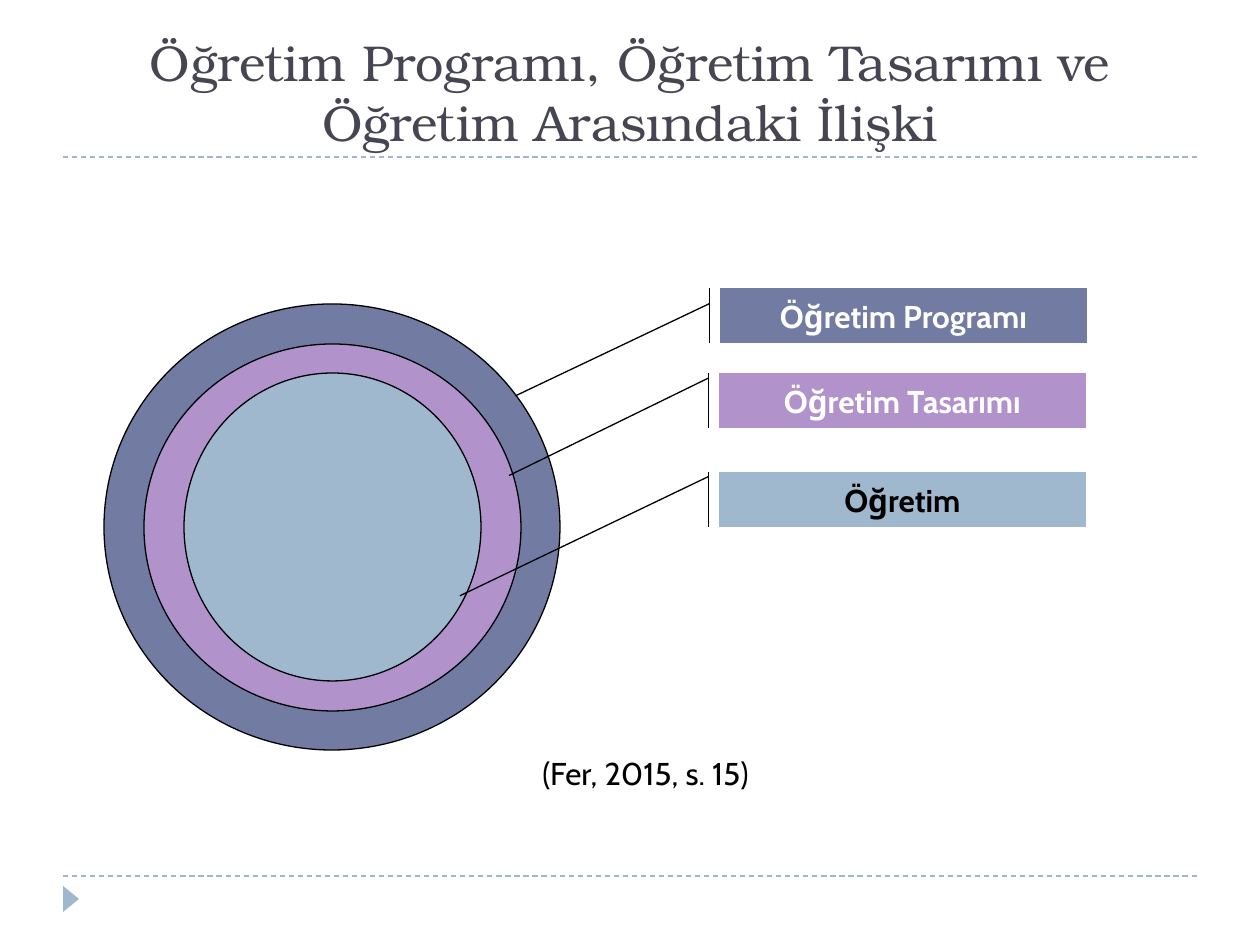
from pptx import Presentation
from pptx.dml.color import RGBColor
from pptx.enum.dml import MSO_LINE
from pptx.enum.shapes import MSO_CONNECTOR, MSO_SHAPE
from pptx.enum.text import MSO_ANCHOR, MSO_AUTO_SIZE, PP_ALIGN
from pptx.oxml.ns import qn
from pptx.util import Emu, Pt

CIRCLE = MSO_SHAPE.FLOWCHART_CONNECTOR
CALLOUT = MSO_SHAPE.LINE_CALLOUT_1_ACCENT_BAR
TRIANGLE = MSO_SHAPE.ISOSCELES_TRIANGLE
STRAIGHT, DASH = MSO_CONNECTOR.STRAIGHT, MSO_LINE.DASH
CENTER, BOTTOM, MIDDLE = PP_ALIGN.CENTER, MSO_ANCHOR.BOTTOM, MSO_ANCHOR.MIDDLE
TOP, NO_FIT = MSO_ANCHOR.TOP, MSO_AUTO_SIZE.NONE

THEME = {
    "navy": RGBColor(0x72, 0x7C, 0xA3),
    "purple": RGBColor(0xB2, 0x92, 0xCA),
    "blue": RGBColor(0x9F, 0xB8, 0xCD),
    "title": RGBColor(0x46, 0x46, 0x53),
    "black": RGBColor(0, 0, 0),
    "white": RGBColor(255, 255, 255),
    "title_font": "TeX Gyre Bonum",
    "body_font": "Cabin",
    "title_size": Pt(28.8),
    "body_size": Pt(18),
    "line_width": Pt(0.75),
}
PX = 914400 / 126


def px(*lengths):
    return [Emu(round(length * PX)) for length in lengths]


def write(shape, text, anchor, font):
    """Fill a shape with one centred paragraph; font maps font attributes to values."""
    frame = shape.text_frame
    for name, value in {"word_wrap": True, "auto_size": NO_FIT, "vertical_anchor": anchor}.items():
        setattr(frame, name, value)
    paragraph = frame.paragraphs[0]
    paragraph.alignment = CENTER
    run = paragraph.add_run()
    run.text = text
    for name, value in font.items():
        if name == "color":
            run.font.color.rgb = value
        else:
            setattr(run.font, name, value)


body_font = {"name": THEME["body_font"], "size": THEME["body_size"], "color": THEME["black"]}

prs = Presentation()
prs.slide_width, prs.slide_height = px(1260, 945)
slide = prs.slides.add_slide(prs.slide_layouts[5])
shapes = slide.shapes

# Title
title = shapes.title
title.left, title.top, title.width, title.height = px(63, 32, 1134, 126)
write(title, "Öğretim Programı, Öğretim Tasarımı ve Öğretim Arasındaki İlişki", BOTTOM,
      {"name": THEME["title_font"], "size": THEME["title_size"], "color": THEME["title"]})

# Dashed rules and page marker
for rule_y in (876, 157):
    rule = shapes.add_connector(STRAIGHT, *px(63, rule_y, 1197, rule_y))
    rule.line.color.rgb = THEME["blue"]
    rule.line.width = THEME["line_width"]
    rule.line.dash_style = DASH
    properties = rule._element.spPr
    properties.append(properties.makeelement(qn("a:effectLst"), {}))

marker = shapes.add_shape(TRIANGLE, *px(58, 891, 26, 16))
marker.rotation = 90
marker.shadow.inherit = False
marker.fill.solid()
marker.fill.fore_color.rgb = THEME["blue"]
marker.line.fill.background()

# Nested circles from the outermost inwards, then their callouts
# Callout adjustments: line start y, x and line end y, x as shares of the box
levels = [
    ("Öğretim Programı", "navy", "white", (104, 304, 456, 446), (720, 288),
     (0.285, -0.029, 1.956, -0.556)),
    ("Öğretim Tasarımı", "purple", "white", (144, 344, 377, 367), (719, 373),
     (0.093, -0.029, 1.863, -0.572)),
    ("Öğretim", "blue", "black", (184, 373, 297, 308), (719, 472),
     (0.084, -0.029, 2.25, -0.706)),
]
circles = [shapes.add_shape(CIRCLE, *px(*level[3])) for level in levels]
for circle, (label, fill, ink, _, corner, pointer) in zip(circles, levels):
    callout = shapes.add_shape(CALLOUT, *px(*corner, 367, 55))
    for index, share in enumerate(pointer):
        callout.adjustments[index] = share
    for part in (circle, callout):
        part.shadow.inherit = False
        part.fill.solid()
        part.fill.fore_color.rgb = THEME[fill]
        part.line.color.rgb = THEME["black"]
        part.line.width = THEME["line_width"]
    write(callout, label, MIDDLE, {**body_font, "bold": True, "color": THEME[ink]})

# Citation
citation = shapes.add_textbox(*px(105, 748, 1081, 50))
write(citation, "(Fer, 2015, s. 15)", TOP, body_font)

prs.save("out.pptx")
